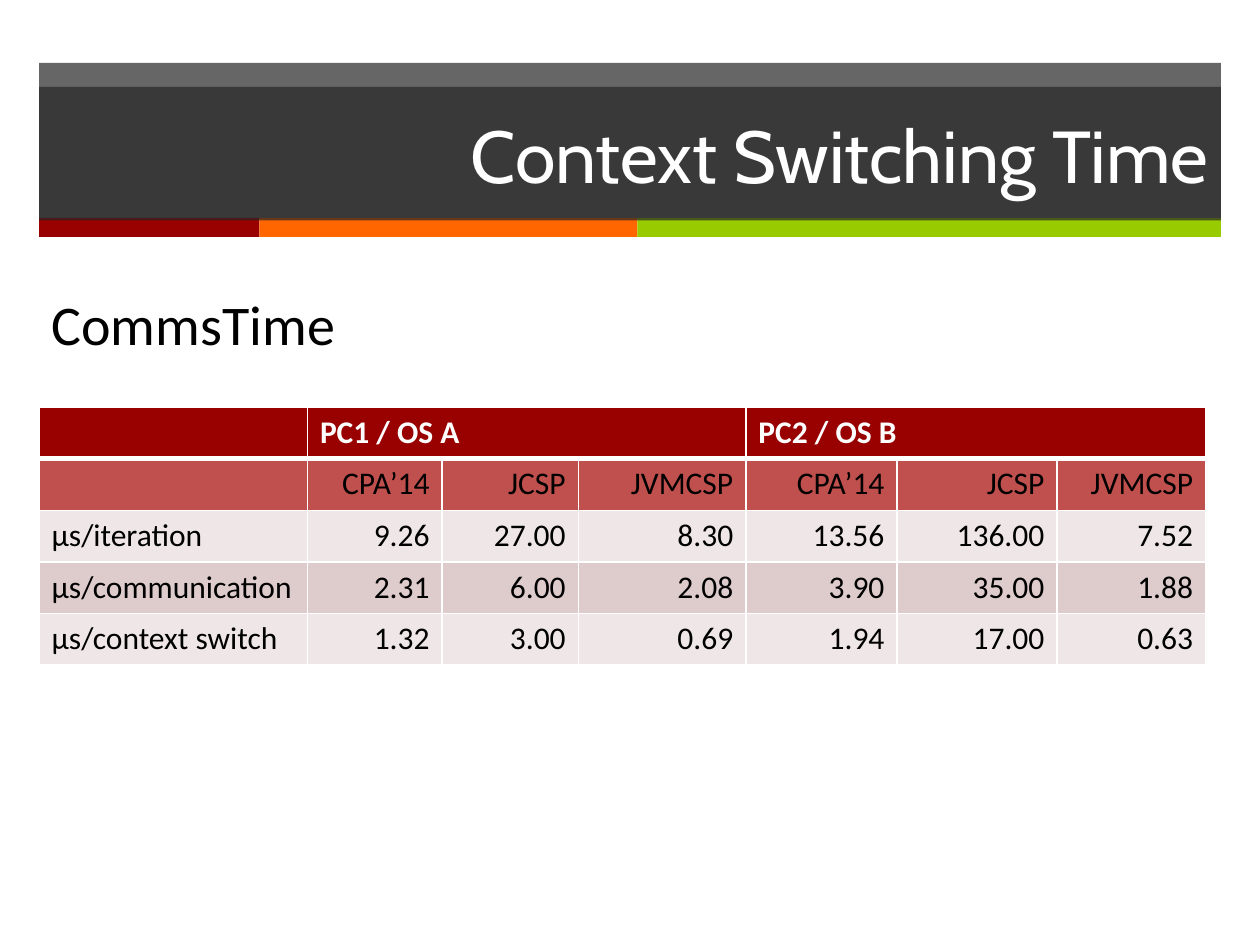
from lxml import etree
from pptx import Presentation
from pptx.dml.color import RGBColor
from pptx.enum.shapes import MSO_SHAPE
from pptx.enum.text import MSO_ANCHOR, PP_ALIGN
from pptx.oxml.ns import qn
from pptx.util import Inches, Pt

COLORS = {
    "band": "262626", "red": "990000", "orange": "FF6600", "green": "99CC00",
    "subheader": "C0504D", "light": "EFE7E7", "dark": "DECCCC",
    "white": "FFFFFF", "black": "000000",
}
SYSTEMS = ["PC1 / OS A", "PC2 / OS B"]
LIBRARIES = ["CPA’14", "JCSP", "JVMCSP"]
TIMINGS = [
    ["μs/iteration", "9.26", "27.00", "8.30", "13.56", "136.00", "7.52"],
    ["μs/communication", "2.31", "6.00", "2.08", "3.90", "35.00", "1.88"],
    ["μs/context switch", "1.32", "3.00", "0.69", "1.94", "17.00", "0.63"],
]
COLUMN_WIDTHS = [2.13, 1.07, 1.08, 1.33, 1.2, 1.27, 1.18]
ROW_HEIGHT = 0.41


def rgb(name):
    return RGBColor.from_string(COLORS[name])


def set_font(paragraph, face, size, color, bold=False):
    font = paragraph.font
    font.name, font.size, font.bold = face, Pt(size), bold
    font.color.rgb = rgb(color)


def add_bar(slide, left, top, width, height, color, opacity=100):
    bar = slide.shapes.add_shape(MSO_SHAPE.RECTANGLE, Inches(left), Inches(top),
                                 Inches(width), Inches(height))
    bar.shadow.inherit = False
    bar.line.fill.background()
    bar.fill.solid()
    bar.fill.fore_color.rgb = rgb(color)
    if opacity < 100:
        tint = bar.fill._xPr.find(qn("a:solidFill"))[0]
        etree.SubElement(tint, qn("a:alpha"), val=str(opacity * 1000))
    return bar


def add_banner(slide, left, top, width, title):
    # Two translucent bands overlap, with the colour stripe between them
    add_bar(slide, left, top, width, 1.24, "band", 70)
    stripe_left = left
    for color, stripe_width in [("red", 1.75), ("orange", 3), ("green", 4.63)]:
        add_bar(slide, stripe_left, top + 1.23, stripe_width, 0.15, color)
        stripe_left += stripe_width
    title_band = add_bar(slide, left, top + 0.19, width, 1.06, "band", 70)
    title_band.text_frame.vertical_anchor = MSO_ANCHOR.MIDDLE
    heading = title_band.text_frame.paragraphs[0]
    heading.text = title
    heading.alignment = PP_ALIGN.RIGHT
    set_font(heading, "Cabin", 42, "white")


def add_subtitle(slide, left, top, width, height, text):
    subtitle = slide.shapes.add_textbox(Inches(left), Inches(top),
                                        Inches(width), Inches(height))
    subtitle.text_frame.word_wrap = False
    label = subtitle.text_frame.paragraphs[0]
    label.text = text
    set_font(label, "Calibri", 32, "black")


def set_borders(cell, top, bottom):
    properties = cell._tc.get_or_add_tcPr()
    for side, points in [("L", 1), ("R", 1), ("T", top), ("B", bottom)]:
        border = etree.SubElement(properties, qn(f"a:ln{side}"), w=str(Pt(points)))
        fill = etree.SubElement(border, qn("a:solidFill"))
        etree.SubElement(fill, qn("a:srgbClr"), val=COLORS["white"])


def add_timing_table(slide, left, top):
    group = len(LIBRARIES)
    header = [""]
    for system in SYSTEMS:
        header += [system] + [""] * (group - 1)
    rows = [header, [""] + LIBRARIES * len(SYSTEMS)] + TIMINGS
    fills = ["red", "subheader", "light", "dark", "light"]
    table = slide.shapes.add_table(
        len(rows), len(COLUMN_WIDTHS), Inches(left), Inches(top),
        Inches(sum(COLUMN_WIDTHS)), Inches(ROW_HEIGHT * len(rows))).table
    for column, width in zip(table.columns, COLUMN_WIDTHS):
        column.width = Inches(width)

    for r, (values, fill) in enumerate(zip(rows, fills)):
        table.rows[r].height = Inches(ROW_HEIGHT)
        is_header = r == 0
        for c, value in enumerate(values):
            cell = table.cell(r, c)
            set_borders(cell, top=3 if r == 1 else 1, bottom=3 if is_header else 1)
            cell.fill.solid()
            cell.fill.fore_color.rgb = rgb(fill)
            entry = cell.text_frame.paragraphs[0]
            entry.text = value
            if c and not is_header:
                entry.alignment = PP_ALIGN.RIGHT
            set_font(entry, "Calibri", 18, "white" if is_header else "black", is_header)

    # Each system heading spans its libraries
    for first in range(1, len(COLUMN_WIDTHS), group):
        table.cell(0, first).merge(table.cell(0, first + group - 1))


def main():
    prs = Presentation()
    prs.slide_width, prs.slide_height = Inches(10), Inches(7.5)
    slide = prs.slides.add_slide(prs.slide_layouts[6])
    add_banner(slide, 0.31, 0.5, 9.38, "Context Switching Time")
    add_timing_table(slide, 0.31, 3.23)
    add_subtitle(slide, 0.31, 2.25, 2.47, 0.64, "CommsTime")
    prs.save("out.pptx")


if __name__ == "__main__":
    main()
